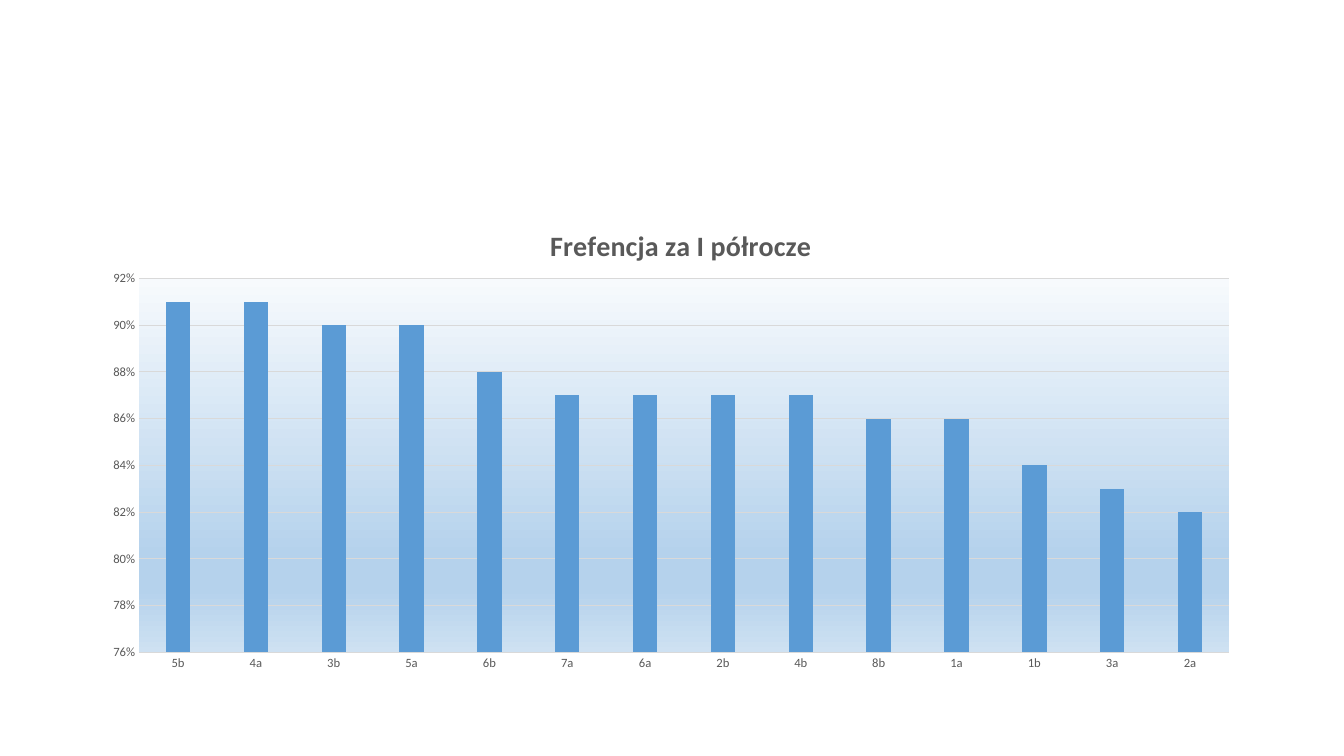
from dataclasses import dataclass

from pptx import Presentation
from pptx.chart.axis import _BaseAxis
from pptx.chart.chart import Chart
from pptx.chart.data import CategoryChartData
from pptx.dml.color import RGBColor
from pptx.enum.chart import XL_CHART_TYPE, XL_TICK_MARK
from pptx.oxml import parse_xml
from pptx.oxml.ns import nsdecls, qn
from pptx.oxml.xmlchemy import BaseOxmlElement
from pptx.text.text import Font
from pptx.util import Inches, Pt


@dataclass(frozen=True)
class Theme:
    font: str = "Calibri"
    text: str = "595959"
    line: str = "D9D9D9"
    bar: str = "5B9BD5"
    title_size: float = 20
    base_size: float = 10
    label_size: float = 9
    line_width: float = 0.75
    plot_gradient: tuple[tuple[int, str], ...] = (
        (0, "F7FAFD"), (74, "B5D2EC"), (83, "B5D2EC"), (100, "CEE1F2"),
    )


@dataclass(frozen=True)
class Attendance:
    school_class: str
    rate: float


THEME = Theme()
TITLE = "Frefencja za I półrocze"
ATTENDANCE = [
    Attendance("5b", 0.91), Attendance("4a", 0.91), Attendance("3b", 0.90),
    Attendance("5a", 0.90), Attendance("6b", 0.88), Attendance("7a", 0.87),
    Attendance("6a", 0.87), Attendance("2b", 0.87), Attendance("4b", 0.87),
    Attendance("8b", 0.86), Attendance("1a", 0.86), Attendance("1b", 0.84),
    Attendance("3a", 0.83), Attendance("2a", 0.82),
]


def format_font(font: Font, *, size: float, color: str = THEME.text, bold: bool = False) -> None:
    font.name = THEME.font
    font.size = Pt(size)
    font.bold = bold
    font.color.rgb = RGBColor.from_string(color)


def format_axis(axis: _BaseAxis) -> None:
    axis.major_tick_mark = axis.minor_tick_mark = XL_TICK_MARK.NONE
    format_font(axis.tick_labels.font, size=THEME.label_size)


def set_layout(element: BaseOxmlElement, index: int, **shares: float) -> None:
    """Place a chart part by shares of the chart's size."""
    for layout in element.findall(qn("c:layout")):
        element.remove(layout)
    target = '<c:layoutTarget val="inner"/>' if "w" in shares else ""
    modes = "".join(f'<c:{key}Mode val="edge"/>' for key in ("x", "y"))
    values = "".join(f'<c:{key} val="{share}"/>' for key, share in shares.items())
    element.insert(index, parse_xml(
        f'<c:layout {nsdecls("c")}><c:manualLayout>{target}{modes}{values}'
        "</c:manualLayout></c:layout>"
    ))


def fill_plot_area(plot_area: BaseOxmlElement) -> None:
    stops = "".join(
        f'<a:gs pos="{position * 1000}"><a:srgbClr val="{color}"/></a:gs>'
        for position, color in THEME.plot_gradient
    )
    plot_area.append(parse_xml(
        f'<c:spPr {nsdecls("c", "a")}><a:gradFill><a:gsLst>{stops}</a:gsLst>'
        '<a:lin ang="5400000" scaled="0"/></a:gradFill><a:ln><a:noFill/></a:ln></c:spPr>'
    ))


def format_chart(chart: Chart) -> None:
    format_font(chart.font, size=THEME.base_size, color="000000")
    chart.has_legend = False

    # Title
    chart.has_title = True
    title_frame = chart.chart_title.text_frame
    title_frame.text = TITLE
    format_font(title_frame.paragraphs[0].runs[0].font, size=THEME.title_size, bold=True)
    set_layout(chart.chart_title._element, 1, x=0.39, y=0.04)

    # Axes
    category_axis, value_axis = chart.category_axis, chart.value_axis
    for axis in (category_axis, value_axis):
        format_axis(axis)
    value_axis.minimum_scale, value_axis.maximum_scale = 0.76, 0.92
    value_axis.major_unit = 0.02
    value_axis.has_major_gridlines = True
    value_axis.tick_labels.number_format = "0%"
    value_axis.tick_labels.number_format_is_linked = False
    value_axis.format.line.fill.background()
    for line in (category_axis.format.line, value_axis.major_gridlines.format.line):
        line.color.rgb = RGBColor.from_string(THEME.line)
        line.width = Pt(THEME.line_width)

    # Bars
    plot = chart.plots[0]
    plot.gap_width, plot.overlap = 219, -27
    plot.vary_by_categories = False
    bars = plot.series[0]
    bars.invert_if_negative = False
    bars.format.fill.solid()
    bars.format.fill.fore_color.rgb = RGBColor.from_string(THEME.bar)

    # Plot area
    plot_area = chart._chartSpace.chart.plotArea
    set_layout(plot_area, 0, x=0.04, y=0.16, w=0.94, h=0.78)
    fill_plot_area(plot_area)


def main() -> None:
    presentation = Presentation()
    presentation.slide_width = Inches(13.33)
    presentation.slide_height = Inches(7.5)
    slide = presentation.slides.add_slide(presentation.slide_layouts[6])

    # Attendance chart
    data = CategoryChartData(number_format="0%")
    data.categories = [entry.school_class for entry in ATTENDANCE]
    data.add_series("Series 1", [entry.rate for entry in ATTENDANCE])
    frame = slide.shapes.add_chart(
        XL_CHART_TYPE.COLUMN_CLUSTERED,
        Inches(0.92), Inches(2), Inches(11.5), Inches(4.76), data,
    )
    format_chart(frame.chart)
    presentation.save("out.pptx")


if __name__ == "__main__":
    main()
